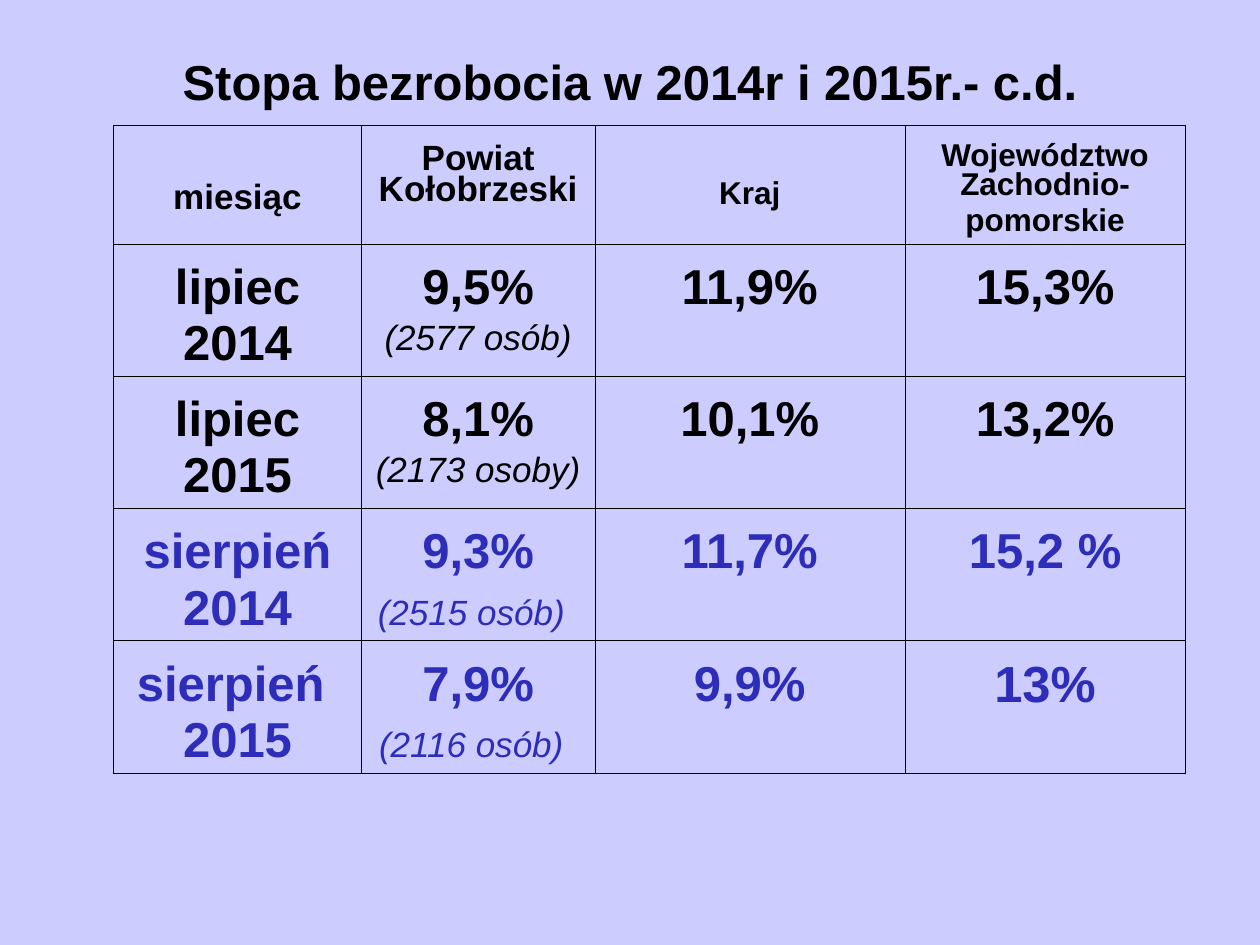
"""Build a slide with a table of unemployment rates in 2014 and 2015."""
from lxml import etree
from pptx import Presentation
from pptx.dml.color import RGBColor
from pptx.enum.text import MSO_ANCHOR, MSO_AUTO_SIZE, PP_ALIGN
from pptx.oxml.ns import qn
from pptx.util import Inches, Pt

CENTER = PP_ALIGN.CENTER
MIDDLE = MSO_ANCHOR.MIDDLE
TOP = MSO_ANCHOR.TOP
NO_AUTOFIT = MSO_AUTO_SIZE.NONE

COLORS = {"background": "CCCCFF", "text": "000000", "august": "2D2DB9", "border": "000000"}
FONT = "Arial"
BODY_SIZE, NOTE_SIZE = 28, 20
LINE_SPACING = 0.81
OUTER_BORDER, INNER_BORDER = 0.23, 0.11
COLUMN_WIDTHS = [1.97, 1.85, 2.46, 2.23]
HEADER_HEIGHT, ROW_HEIGHT = 0.94, 1.05
BODY_TOP_MARGIN = 0.2

HEADERS = [
    (["miesiąc"], 20, 0.47),
    (["Powiat Kołobrzeski"], 20, 0.16),
    (["Kraj"], 18, 0.45),
    (["Województwo Zachodnio-", "pomorskie"], 18, 0.15),
]
ROWS = [
    ("text", [["lipiec", "2014"], ["9,5%", "(2577 osób)"], ["11,9%"], ["15,3%"]]),
    ("text", [["lipiec", "2015"], ["8,1%", "(2173 osoby)"], ["10,1%"], ["13,2%"]]),
    ("august", [["sierpień", "2014"], ["9,3%", "(2515 osób) "], ["11,7%"], ["15,2 %"]]),
    ("august", [["sierpień ", "2015"], ["7,9%", "(2116 osób) "], ["9,9%"], ["13%"]]),
]


def add_text(paragraph, text, size=BODY_SIZE, color="text", bold=True, italic=False):
    run = paragraph.add_run()
    run.text = text
    run.font.name = FONT
    run.font.size = Pt(size)
    run.font.bold = bold
    run.font.italic = italic
    run.font.color.rgb = RGBColor.from_string(COLORS[color])


def add_border(cell, side, width):
    line = etree.SubElement(cell._tc.get_or_add_tcPr(), qn(f"a:ln{side}"), w=str(Pt(width)))
    fill = etree.SubElement(line, qn("a:solidFill"))
    etree.SubElement(fill, qn("a:srgbClr"), val=COLORS["border"])


presentation = Presentation()
presentation.slide_width = Inches(10)
presentation.slide_height = Inches(7.5)
slide = presentation.slides.add_slide(presentation.slide_layouts[5])
slide.background.fill.solid()
slide.background.fill.fore_color.rgb = RGBColor.from_string(COLORS["background"])

title = slide.shapes.title
title.left, title.top = Inches(0.5), Inches(0.3)
title.width, title.height = Inches(9), Inches(0.69)
title.text_frame.auto_size = NO_AUTOFIT
title.text_frame.vertical_anchor = MIDDLE
title_paragraph = title.text_frame.paragraphs[0]
title_paragraph.alignment = CENTER
add_text(title_paragraph, "Stopa bezrobocia w 2014r i 2015r.- c.d.")

table_height = HEADER_HEIGHT + ROW_HEIGHT * len(ROWS)
table = slide.shapes.add_table(
    len(ROWS) + 1, len(COLUMN_WIDTHS),
    Inches(0.9), Inches(0.99), Inches(sum(COLUMN_WIDTHS)), Inches(table_height),
).table
for column, width in zip(table.columns, COLUMN_WIDTHS):
    column.width = Inches(width)
for row_index, row in enumerate(table.rows):
    row.height = Inches(ROW_HEIGHT if row_index else HEADER_HEIGHT)

grid = [("text", HEADERS)]
for color, row_cells in ROWS:
    grid.append((color, [(lines, BODY_SIZE, BODY_TOP_MARGIN) for lines in row_cells]))

last_row, last_column = len(grid) - 1, len(COLUMN_WIDTHS) - 1
for row_index, (color, row_cells) in enumerate(grid):
    for column_index, (lines, size, top_margin) in enumerate(row_cells):
        cell = table.cell(row_index, column_index)
        outer_sides = {
            "L": column_index == 0,
            "R": column_index == last_column,
            "T": row_index == 0,
            "B": row_index == last_row,
        }
        for side, is_outer in outer_sides.items():
            add_border(cell, side, OUTER_BORDER if is_outer else INNER_BORDER)
        cell.fill.background()
        cell.vertical_anchor = TOP
        cell.margin_left = cell.margin_right = Inches(0.1)
        cell.margin_top, cell.margin_bottom = Inches(top_margin), Inches(0.05)

        for line_index, line in enumerate(lines):
            frame = cell.text_frame
            paragraph = frame.add_paragraph() if line_index else frame.paragraphs[0]
            paragraph.alignment = CENTER
            paragraph.line_spacing = LINE_SPACING
            paragraph.space_before = Pt(size / 4)
            if line.startswith("("):
                note = line.rstrip()
                add_text(paragraph, note, size=NOTE_SIZE, color=color, bold=False, italic=True)
                if line != note:
                    add_text(paragraph, " ", color=color)
            else:
                add_text(paragraph, line, size=size, color=color)

last_run = table.cell(last_row, last_column).text_frame.paragraphs[0].runs[0]
last_run.font.size = Pt(29)

presentation.save("out.pptx")
